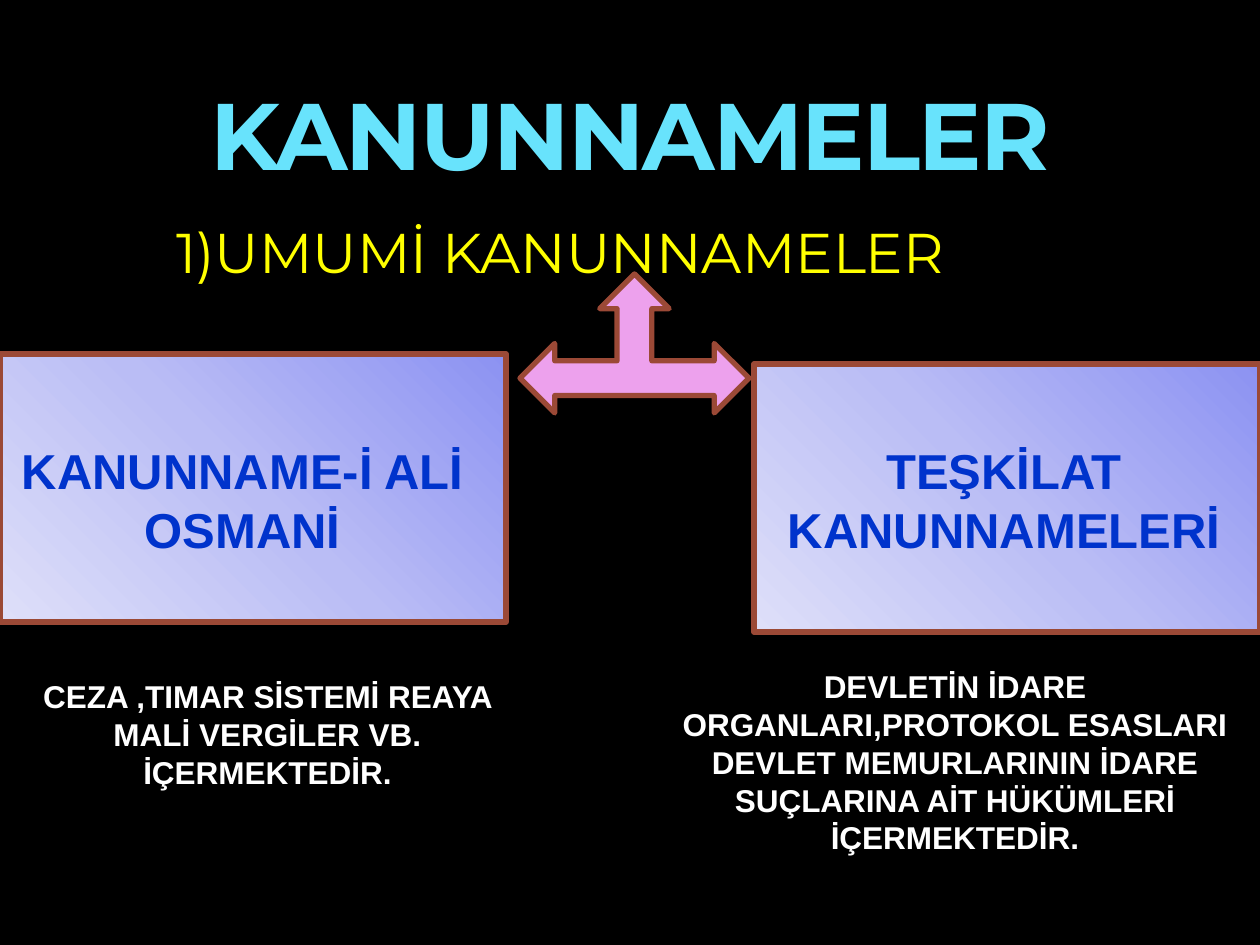
from dataclasses import dataclass

from pptx import Presentation
from pptx.dml.color import RGBColor
from pptx.enum.shapes import MSO_SHAPE
from pptx.enum.text import MSO_ANCHOR, MSO_AUTO_SIZE, PP_ALIGN
from pptx.oxml import parse_xml
from pptx.oxml.ns import nsdecls
from pptx.util import Pt

PROCESS = MSO_SHAPE.FLOWCHART_PROCESS
THREE_WAY_ARROW = MSO_SHAPE.LEFT_RIGHT_UP_ARROW
CENTER, LEFT = PP_ALIGN.CENTER, PP_ALIGN.LEFT
BOTTOM, TOP = MSO_ANCHOR.BOTTOM, MSO_ANCHOR.TOP
NO_FIT = MSO_AUTO_SIZE.NONE
TITLE_ONLY = 5
EMU_PER_PX = 914400 / 126


@dataclass(frozen=True)
class Theme:
    background: str = "000000"
    border: str = "9B4936"
    arrow: str = "EDA1ED"
    gradient: tuple = ((0, "8C92F2"), (50, "BABDF5"), (100, "DEDFF9"))
    border_width: int = 3
    title: tuple = ("Montserrat", 54, True, "68E3FC")
    heading: tuple = ("Montserrat", 32, False, "FFFF00")
    label: tuple = ("Arial", 28, True, "0033CC")
    detail: tuple = ("Arial", 18, True, "FFFFFF")


THEME = Theme()


def px(value):
    return round(value * EMU_PER_PX)


def set_attributes(target, values):
    for name, value in values.items():
        setattr(target, name, value)


def place(shape, box):
    set_attributes(shape, dict(zip(("left", "top", "width", "height"), map(px, box))))


def write_text(shape, text, style, alignment=CENTER, anchor=TOP):
    frame = shape.text_frame
    set_attributes(frame, {"word_wrap": True, "auto_size": NO_FIT,
                           "vertical_anchor": anchor})
    paragraph = frame.paragraphs[0]
    paragraph.alignment = alignment
    run = paragraph.add_run()
    run.text = text
    name, size, bold, color = style
    set_attributes(run.font, {"name": name, "size": Pt(size), "bold": bold})
    run.font.color.rgb = RGBColor.from_string(color)
    return run


def add_title(slide, text, box):
    title = slide.shapes.title
    place(title, box)
    run = write_text(title, text, THEME.title, anchor=BOTTOM)
    title.text_frame.margin_bottom = 0
    run.font._element.set("spc", "-100")


def add_text(slide, text, box, style, alignment=CENTER):
    text_box = slide.shapes.add_textbox(*map(px, box))
    write_text(text_box, text, style, alignment)


def add_outlined_shape(slide, kind, box):
    shape = slide.shapes.add_shape(kind, *map(px, box))
    shape.shadow.inherit = False
    shape.line.color.rgb = RGBColor.from_string(THEME.border)
    shape.line.width = Pt(THEME.border_width)
    return shape


def add_panel(slide, box):
    panel = add_outlined_shape(slide, PROCESS, box)
    # Radial gradient centred on the top right corner
    stops = "".join(
        f'<a:gs pos="{position * 1000}"><a:srgbClr val="{color}"/></a:gs>'
        for position, color in THEME.gradient)
    gradient = parse_xml(
        f'<a:gradFill {nsdecls("a")} rotWithShape="1"><a:gsLst>{stops}</a:gsLst>'
        '<a:path path="circle"><a:fillToRect l="100000" b="100000"/></a:path>'
        '</a:gradFill>')
    panel._element.spPr.find("{*}prstGeom").addnext(gradient)


def add_arrow(slide, box):
    arrow = add_outlined_shape(slide, THREE_WAY_ARROW, box)
    arrow.fill.solid()
    arrow.fill.fore_color.rgb = RGBColor.from_string(THEME.arrow)


def main():
    presentation = Presentation()
    set_attributes(presentation, {"slide_width": px(1260), "slide_height": px(945)})
    slide = presentation.slides.add_slide(presentation.slide_layouts[TITLE_ONLY])
    slide.background.fill.solid()
    slide.background.fill.fore_color.rgb = RGBColor.from_string(THEME.background)

    # Title and heading
    add_title(slide, "KANUNNAMELER", (63, 21, 1134, 168))
    add_text(slide, "1)UMUMİ KANUNNAMELER", (164, 211, 1033, 80),
             THEME.heading, LEFT)

    # Arrow from the heading to both kinds of law code
    add_arrow(slide, (520, 274, 229, 139))

    # Each branch: panel, label, detail
    branches = (
        ((0, 354, 506, 268),
         "KANUNNAME-İ ALİ OSMANİ", (-25, 434, 535, 131),
         "CEZA ,TIMAR SİSTEMİ REAYA MALİ VERGİLER VB. İÇERMEKTEDİR.",
         (0, 671, 535, 127)),
        ((754, 364, 506, 268),
         "TEŞKİLAT KANUNNAMELERİ", (748, 434, 512, 131),
         "DEVLETİN İDARE ORGANLARI,PROTOKOL ESASLARI DEVLET MEMURLARININ "
         "İDARE SUÇLARINA AİT HÜKÜMLERİ İÇERMEKTEDİR.",
         (650, 661, 610, 204)),
    )
    for panel_box, label, label_box, detail, detail_box in branches:
        add_panel(slide, panel_box)
        add_text(slide, label, label_box, THEME.label)
        add_text(slide, detail, detail_box, THEME.detail)

    presentation.save("out.pptx")


if __name__ == "__main__":
    main()
